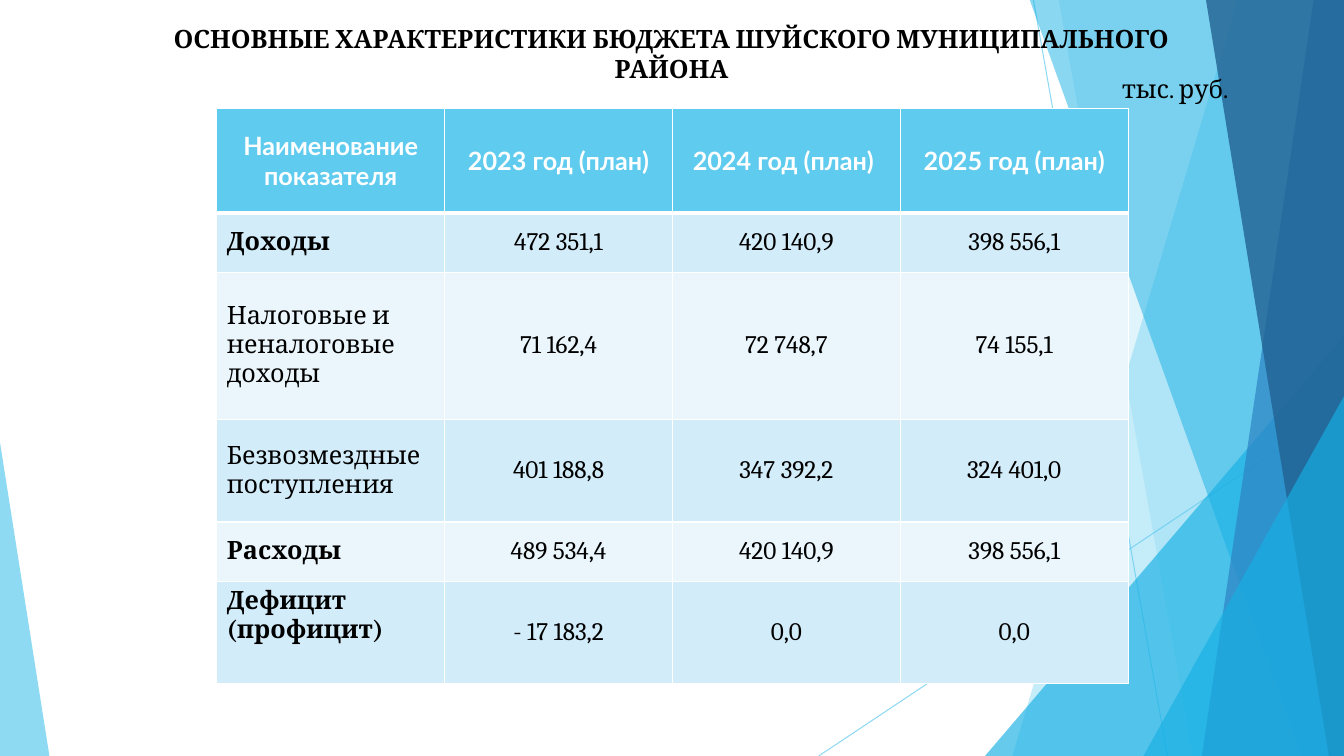
from lxml.etree import SubElement
from pptx import Presentation
from pptx.dml.color import RGBColor
from pptx.enum.shapes import MSO_CONNECTOR, MSO_SHAPE
from pptx.enum.text import MSO_ANCHOR, MSO_AUTO_SIZE, PP_ALIGN
from pptx.oxml.ns import qn
from pptx.util import Pt

EMU_PER_PX = 9144  # 100 px to the inch
WIDTH, HEIGHT = 1333, 750
SKY, CYAN, BLUE, NAVY = "5FCBEF", "17B0E4", "2E83C3", "226292"
WHITE, BLACK = "FFFFFF", "000000"
BANDS = ("D2ECF9", "EAF6FC")


def px(length):
    return int(length * EMU_PER_PX)


def color(hex_value):
    return RGBColor.from_string(hex_value)


def set_opacity(shape, percent):
    for tint in shape.element.spPr.iter(qn("a:srgbClr")):
        SubElement(tint, qn("a:alpha"), val=str(percent * 1000))


class BudgetSlide:
    serif, sans, size = "Cambria", "Lato", 18

    def __init__(self, presentation):
        self.slide = presentation.slides.add_slide(presentation.slide_layouts[5])
        self.shapes = self.slide.shapes

    def style_text(self, frame, text, align=PP_ALIGN.LEFT, font=serif, tint=BLACK, bold=False):
        frame.text = text
        paragraph = frame.paragraphs[0]
        paragraph.alignment = align
        paragraph.font.name = font
        paragraph.font.size = Pt(self.size)
        paragraph.font.bold = bold
        paragraph.font.color.rgb = color(tint)

    def title(self, text, left, top, width, height):
        heading = self.shapes.title
        heading.left, heading.top = px(left), px(top)
        heading.width, heading.height = px(width), px(height)
        frame = heading.text_frame
        frame.word_wrap = True
        frame.auto_size = MSO_AUTO_SIZE.NONE
        frame.vertical_anchor = MSO_ANCHOR.TOP
        self.style_text(frame, text, PP_ALIGN.CENTER, bold=True)
        self.shapes.element.append(heading.element)  # in front of the backdrop

    def label(self, text, left, top, width, height):
        frame = self.shapes.add_textbox(px(left), px(top), px(width), px(height)).text_frame
        frame.word_wrap = True
        self.style_text(frame, text)

    def line(self, start, end, tint, opacity):
        ray = self.shapes.add_connector(
            MSO_CONNECTOR.STRAIGHT, *map(px, start), *map(px, end))
        ray.line.color.rgb = color(tint)
        ray.line.width = Pt(0.75)
        set_opacity(ray, opacity)
        SubElement(ray.element.spPr, qn("a:effectLst"))

    def finish(self, facet, tint, opacity):
        facet.shadow.inherit = False
        facet.fill.solid()
        facet.fill.fore_color.rgb = color(tint)
        facet.line.fill.background()
        set_opacity(facet, opacity)

    def facet(self, top_x, bottom_x, tint, opacity):
        """Fill the right of the slide from a slanted edge onwards."""
        builder = self.shapes.build_freeform(top_x, -1, scale=EMU_PER_PX)
        builder.add_line_segments([(WIDTH, -1), (WIDTH, HEIGHT), (bottom_x, HEIGHT)], close=True)
        self.finish(builder.convert_to_shape(), tint, opacity)

    def triangle(self, left, top, width, apex, tint, opacity):
        wedge = self.shapes.add_shape(
            MSO_SHAPE.ISOSCELES_TRIANGLE, px(left), px(top), px(width), px(HEIGHT - top))
        wedge.adjustments[0] = apex
        self.finish(wedge, tint, opacity)

    def border(self, cell, edge, points):
        side = SubElement(cell._tc.get_or_add_tcPr(), qn(f"a:{edge}"), w=str(Pt(points)))
        SubElement(SubElement(side, qn("a:solidFill")), qn("a:srgbClr"), val=WHITE)

    def cell(self, cell, text, header, first, bold, band):
        # Borders come before the fill in the cell properties
        for edge in ("lnL", "lnR", "lnT", "lnB"):
            self.border(cell, edge, 3 if header and edge == "lnB" else 1)
        cell.fill.solid()
        cell.fill.fore_color.rgb = color(SKY if header else band)
        cell.vertical_anchor = MSO_ANCHOR.MIDDLE
        self.style_text(
            cell.text_frame, text,
            PP_ALIGN.LEFT if first and not header else PP_ALIGN.CENTER,
            self.sans if header else self.serif,
            WHITE if header else BLACK,
            header or (first and bold))

    def table(self, rows, bold_rows, left, top, column_width, row_heights):
        columns = len(rows[0])
        grid = self.shapes.add_table(
            len(rows), columns, px(left), px(top),
            px(column_width * columns), px(sum(row_heights))).table
        for column in grid.columns:
            column.width = px(column_width)
        for r, (values, height) in enumerate(zip(rows, row_heights)):
            grid.rows[r].height = px(height)
            for c, value in enumerate(values):
                self.cell(grid.cell(r, c), value, r == 0, c == 0,
                          values[0] in bold_rows, BANDS[(r - 1) % 2])
        return grid


def main():
    presentation = Presentation()
    presentation.slide_width, presentation.slide_height = px(WIDTH), px(HEIGHT)
    budget = BudgetSlide(presentation)

    # Faceted backdrop
    budget.line((1025, 0), (1158, HEIGHT), SKY, 70)
    budget.line((WIDTH, 403), (812, HEIGHT), SKY, 70)
    budget.facet(1228, 1004, SKY, 36)
    budget.facet(1050, 1183, SKY, 20)
    budget.triangle(977, 333, 356, 1, CYAN, 66)
    budget.facet(1021, 1291, CYAN, 50)
    budget.facet(1303, 1192, BLUE, 70)
    budget.facet(1196, 1318, NAVY, 80)
    budget.triangle(1134, 393, 199, 1, CYAN, 66)
    budget.triangle(0, 439, 49, 0, SKY, 70)

    # Budget figures
    deficit = "Дефицит (профицит)"
    figures = [
        ("Наименование показателя", "2023 год (план)", "2024 год (план) ", "2025 год (план)"),
        ("Доходы", "472 351,1", "420 140,9", "398 556,1"),
        ("Налоговые и неналоговые доходы", "71 162,4", "72 748,7", "74 155,1"),
        ("Безвозмездные поступления", "401 188,8", "347 392,2", "324 401,0"),
        ("Расходы", "489 534,4", "420 140,9", "398 556,1"),
        (deficit, "- 17 183,2", "0,0", "0,0"),
    ]
    grid = budget.table(figures, ("Доходы", "Расходы", deficit),
                        215, 108, 226, (103, 59, 146, 102, 59, 101))
    grid.cell(len(figures) - 1, 0).vertical_anchor = MSO_ANCHOR.TOP

    # Heading and unit
    budget.title("ОСНОВНЫЕ ХАРАКТЕРИСТИКИ БЮДЖЕТА ШУЙСКОГО МУНИЦИПАЛЬНОГО РАЙОНА",
                 144, 18, 1044, 71)
    budget.label("тыс. руб.", 1103, 68, 155, 40)

    presentation.save("out.pptx")


if __name__ == "__main__":
    main()
